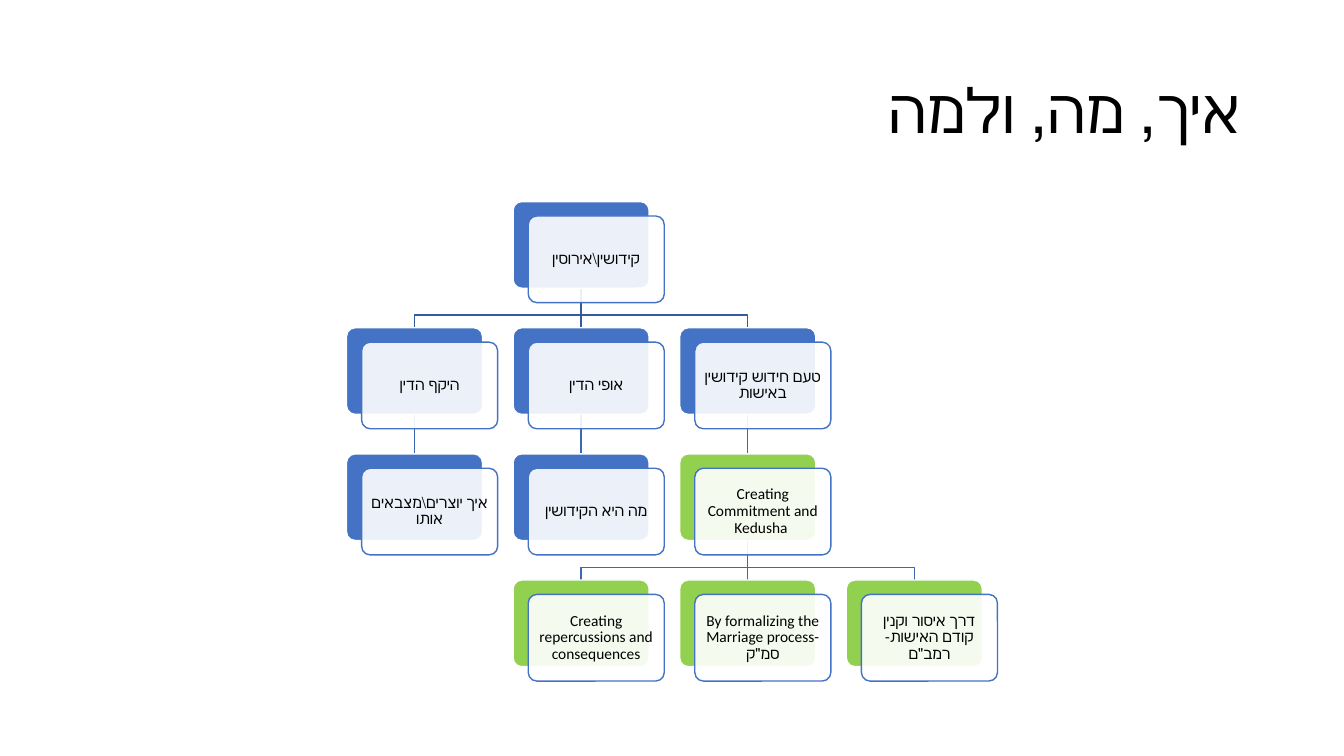
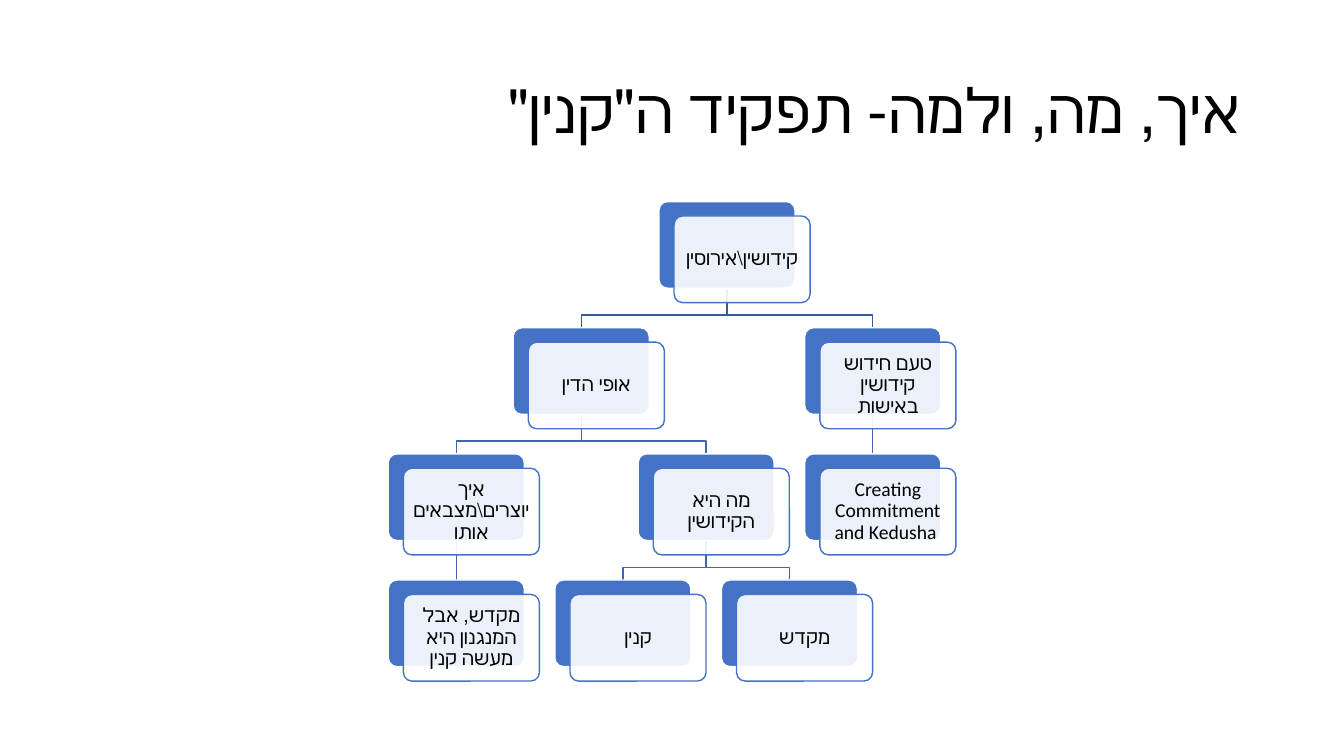
from dataclasses import dataclass

from lxml import etree
from pptx import Presentation
from pptx.dml.color import RGBColor
from pptx.enum import shapes, text
from pptx.oxml.ns import qn
from pptx.util import Pt

BLUE = RGBColor(0x44, 0x72, 0xC4)
GREEN = RGBColor(0x92, 0xD0, 0x50)
WHITE = RGBColor(0xFF, 0xFF, 0xFF)
BLACK = RGBColor(0, 0, 0)
DARK = RGBColor(0x36, 0x5B, 0x9D)
MID = RGBColor(0x3E, 0x67, 0xB2)
FONT = "Calibri"

CARD_W, CARD_H = 97.2, 61.9
STEP_X, STEP_Y = 119, 90.1
TOP = 144
SHIFT_X, SHIFT_Y = 10.8, 10.3
BEND = 19.1

TITLE = dict(left=Pt(66), top=Pt(28.8), width=Pt(828), height=Pt(104.4))


@dataclass
class Node:
    label: str
    col: float = 0
    kids: tuple = ()
    tint: RGBColor = BLUE

    def place(self):
        if self.kids:
            return sum(kid.place() for kid in self.kids) / len(self.kids)
        return self.col


def apply(item, values):
    for name, value in values.items():
        setattr(item, name, value)


def write(frame, label, size, align):
    apply(frame, dict(text=label, word_wrap=True,
                      vertical_anchor=text.MSO_ANCHOR.MIDDLE))
    para = frame.paragraphs[0]
    apply(para, dict(alignment=align, line_spacing=0.9))
    run = para.runs[0]
    apply(run.font, dict(name=FONT, size=Pt(size)))
    run.font.color.rgb = BLACK
    return para


def add_title(slide, label):
    title = slide.shapes.title
    apply(title, TITLE)
    para = write(title.text_frame, label, 44, text.PP_ALIGN.RIGHT)
    para._p.get_or_add_pPr().set("rtl", "1")


def add_plate(slide, x, y, fill, edge):
    plate = slide.shapes.add_shape(shapes.MSO_SHAPE.ROUNDED_RECTANGLE,
                                   Pt(x), Pt(y), Pt(CARD_W), Pt(CARD_H))
    plate.adjustments[0] = 0.1
    plate.shadow.inherit = False
    plate.fill.solid()
    plate.fill.fore_color.rgb = fill
    plate.line.color.rgb = edge
    plate.line.width = Pt(1)
    return plate


def add_card(slide, node, x, y, size):
    add_plate(slide, x, y, node.tint, WHITE)
    front = add_plate(slide, x + SHIFT_X, y + SHIFT_Y, WHITE, BLUE)
    color = front._element.spPr.find(".//" + qn("a:srgbClr"))
    etree.SubElement(color, qn("a:alpha")).set("val", "90000")
    sides = ("left", "top", "right", "bottom")
    apply(front.text_frame, {f"margin_{side}": Pt(0.3 * size) for side in sides})
    write(front.text_frame, node.label, size, text.PP_ALIGN.CENTER)


def add_link(slide, x1, y1, x2, y2, color):
    if abs(x1 - x2) < 0.01:
        link = slide.shapes.add_connector(shapes.MSO_CONNECTOR.STRAIGHT,
                                          Pt(x1), Pt(y1), Pt(x2), Pt(y2))
        etree.SubElement(link._element.spPr, qn("a:effectLst"))
    else:
        pen = slide.shapes.build_freeform(Pt(x1), Pt(y1))
        bend = Pt(y1 + BEND)
        pen.add_line_segments([(Pt(x1), bend), (Pt(x2), bend), (Pt(x2), Pt(y2))],
                              close=False)
        link = pen.convert_to_shape()
        link.shadow.inherit = False
        link.fill.background()
    link.line.color.rgb = color
    link.line.width = Pt(1)


def walk(node, row=0):
    yield node, row
    for kid in node.kids:
        yield from walk(kid, row + 1)


def add_tree(slide, root, left, size):
    cards = [(node, row, left + STEP_X * node.place(), TOP + STEP_Y * row)
             for node, row in walk(root)]
    half = CARD_W / 2
    for node, row, x, y in cards:
        for kid in node.kids:
            add_link(slide, x + half, y + CARD_H,
                     left + STEP_X * kid.place() + half, y + STEP_Y,
                     MID if row else DARK)
    for node, row, x, y in cards:
        add_card(slide, node, x, y, size)


ROOT = "קידושין\\אירוסין"
REASON = "טעם חידוש קידושין באישות"
NATURE = "אופי הדין"
WHAT = "מה היא הקידושין"
HOW = "איך יוצרים\\מצבאים אותו"
BOND = "Creating Commitment and Kedusha "

GOALS = Node(ROOT, kids=(
    Node(REASON, kids=(
        Node(BOND, tint=GREEN, kids=(
            Node("דרך איסור וקנין קודם האישות- רמב\"ם", 3, tint=GREEN),
            Node("By formalizing the Marriage process- סמ\"ק", 2, tint=GREEN),
            Node("Creating repercussions and consequences", 1, tint=GREEN))),)),
    Node(NATURE, kids=(Node(WHAT, 1),)),
    Node("היקף הדין", kids=(Node(HOW, 0),))))

ROLE = Node(ROOT, kids=(
    Node(REASON, kids=(Node(BOND, 2.5),)),
    Node(NATURE, kids=(
        Node(WHAT, kids=(Node("מקדש", 2), Node("קנין", 1))),
        Node(HOW, kids=(Node("מקדש, אבל המנגנון היא מעשה קנין", 0),))))))

PAGES = [("איך, מה, ולמה", GOALS, 247.5, 11),
         ("איך, מה, ולמה- תפקיד ה\"קנין\"", ROLE, 277.3, 14)]


def main():
    deck = Presentation()
    apply(deck, dict(slide_width=Pt(960), slide_height=Pt(540)))
    for title, root, left, size in PAGES:
        slide = deck.slides.add_slide(deck.slide_layouts[5])
        add_title(slide, title)
        add_tree(slide, root, left, size)
    deck.save("out.pptx")


if __name__ == "__main__":
    main()
